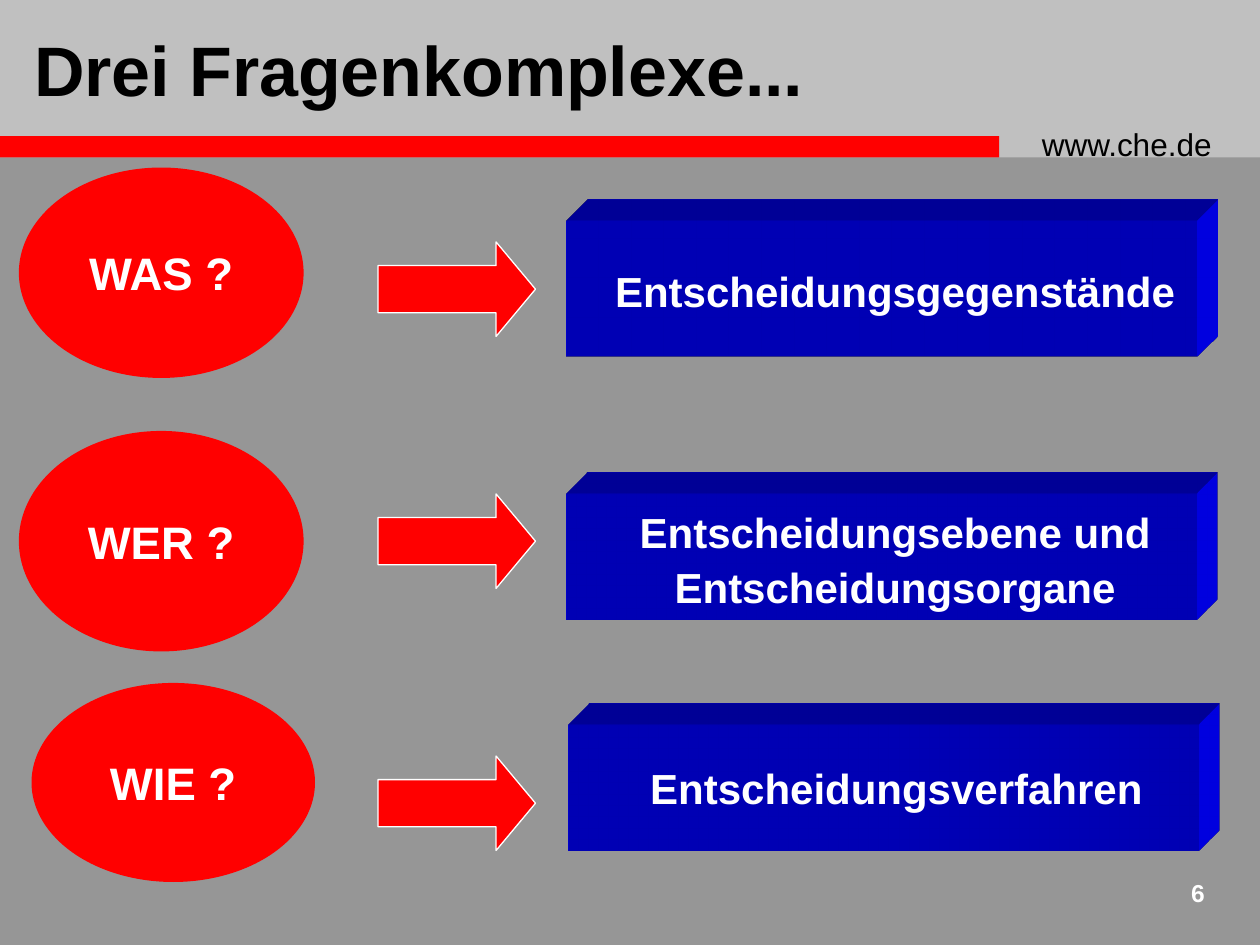
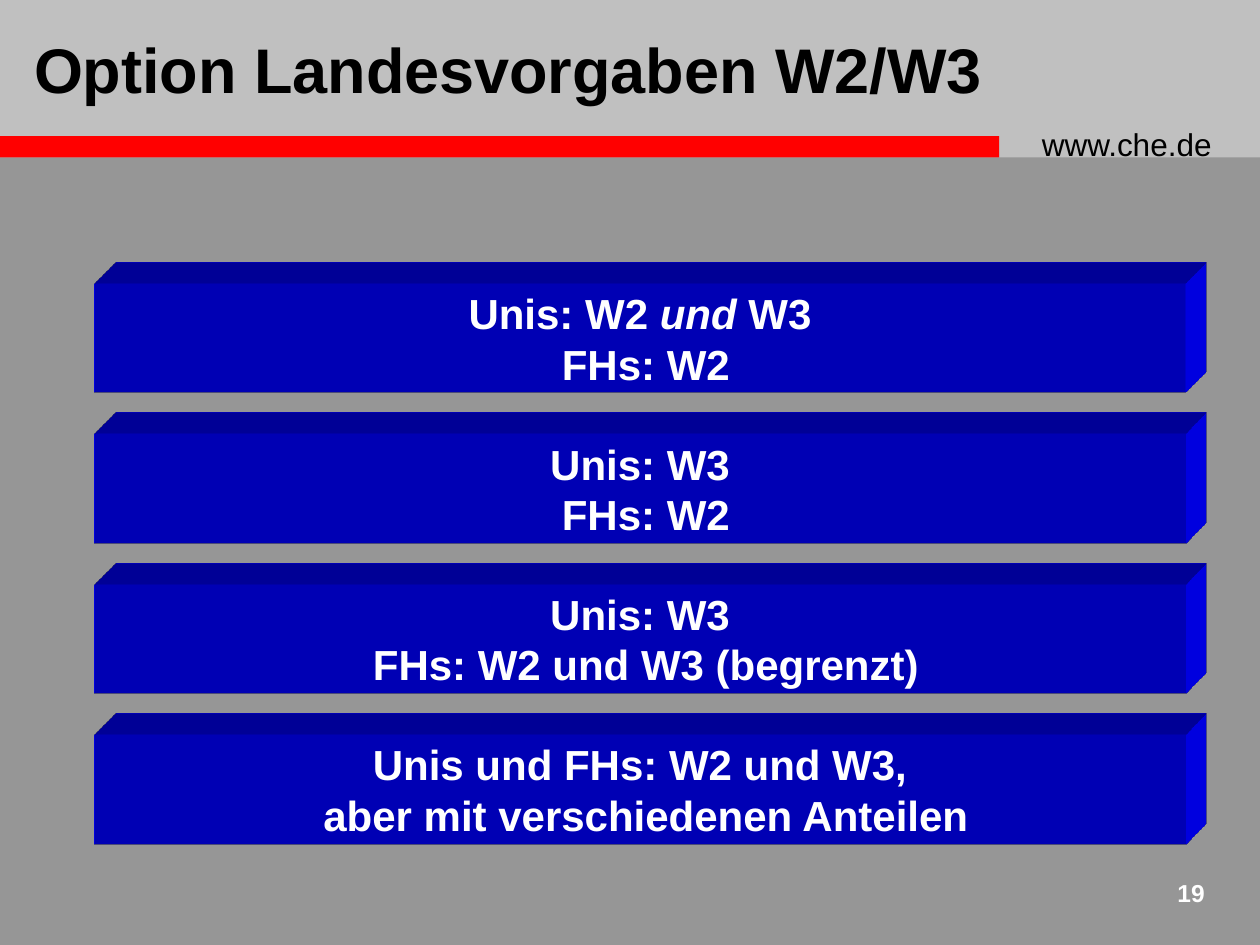
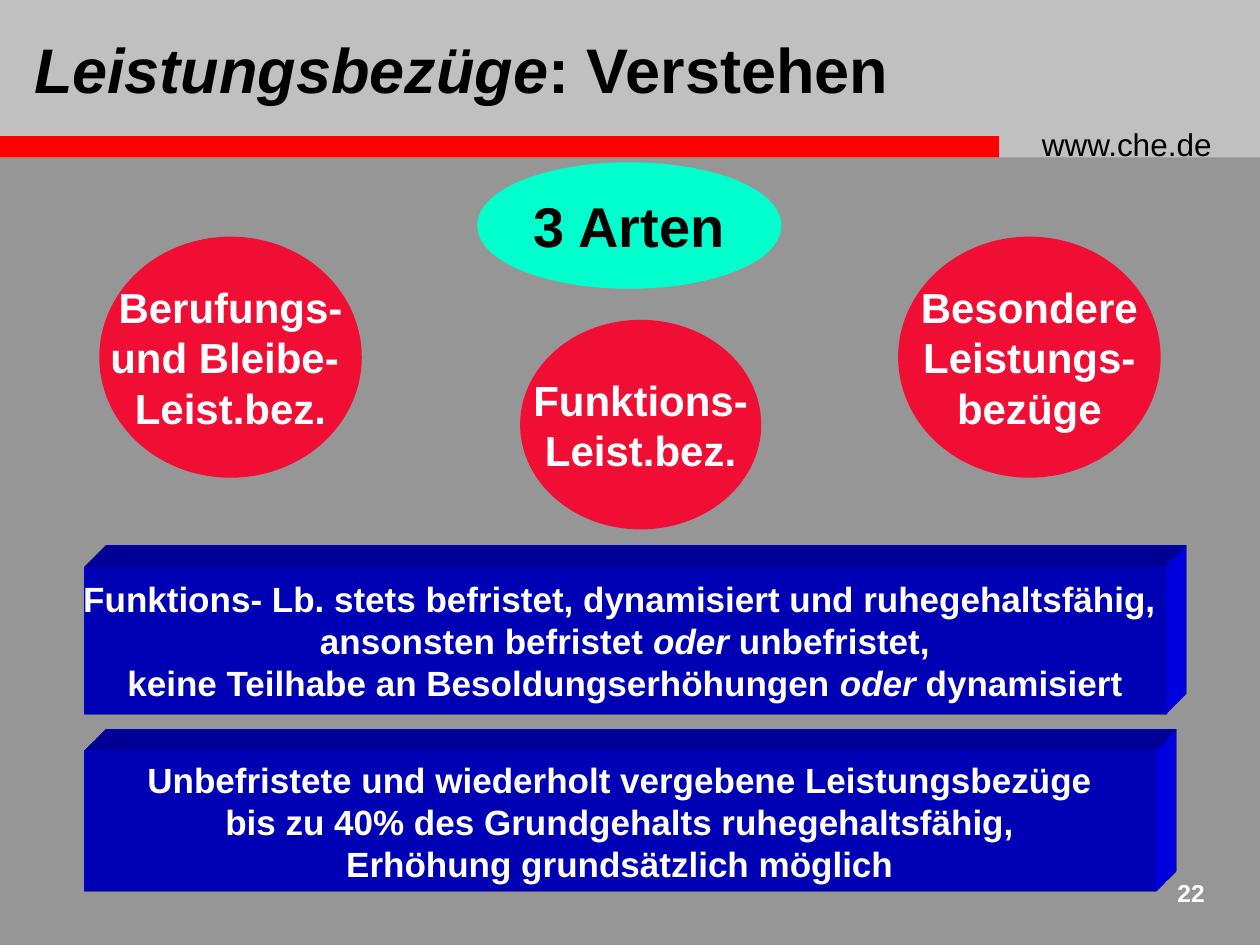
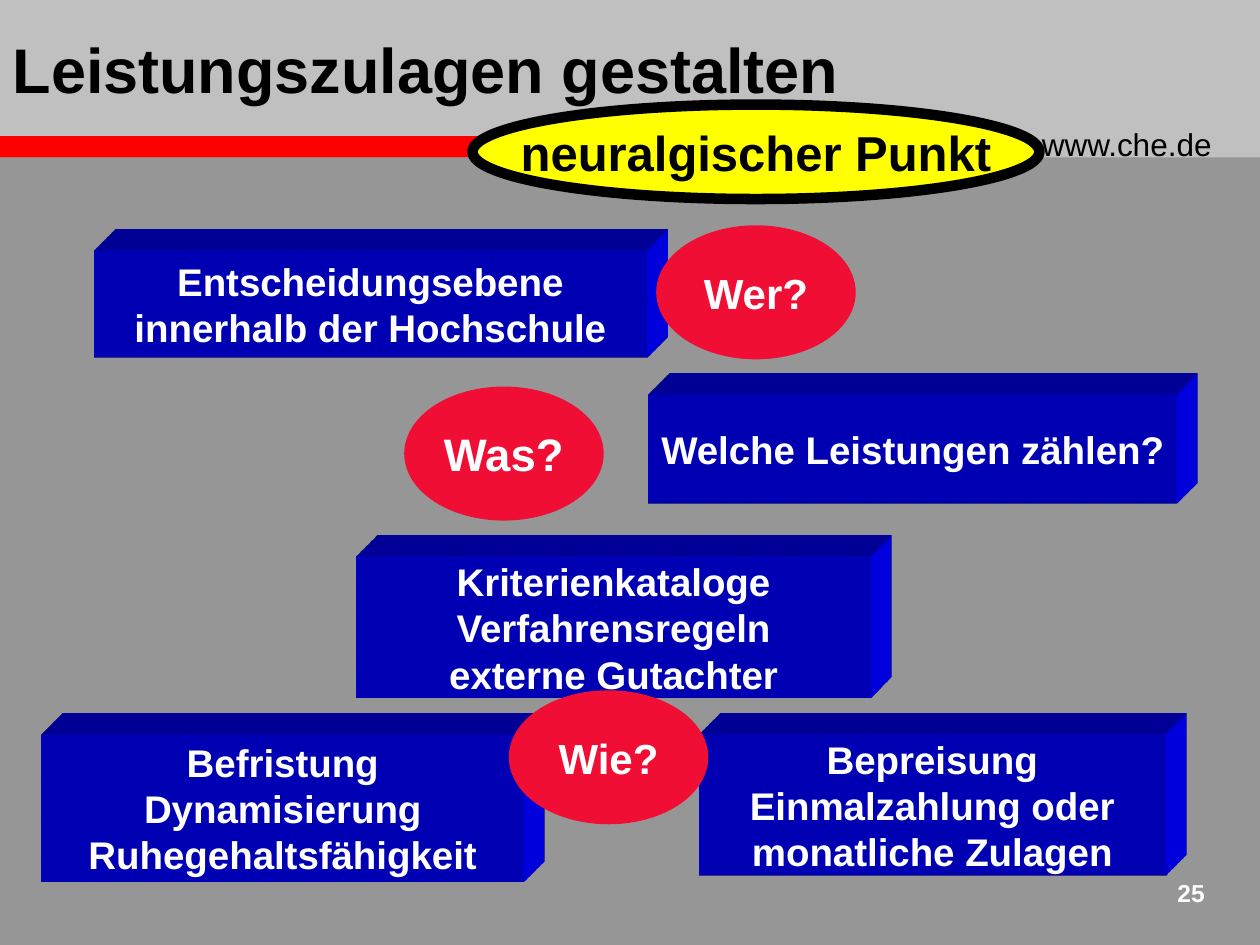
from lxml import etree
from pptx import Presentation
from pptx.dml.color import RGBColor
from pptx.enum import shapes, text
from pptx.oxml import parse_xml
from pptx.oxml.ns import nsdecls, qn
from pptx.util import Inches, Pt

FONT = "Arial"
BLACK = RGBColor(0x00, 0x00, 0x00)
WHITE = RGBColor(0xFF, 0xFF, 0xFF)
GREY = RGBColor(0x96, 0x96, 0x96)
SILVER = RGBColor(0xC0, 0xC0, 0xC0)
RED = RGBColor(0xFF, 0x00, 0x00)
CRIMSON = RGBColor(0xF0, 0x0E, 0x34)
BLUE = RGBColor(0x00, 0x00, 0xFF)
TURQUOISE = RGBColor(0x00, 0xFF, 0xCC)
YELLOW = RGBColor(0xFF, 0xFF, 0x00)

SHAPE = shapes.MSO_SHAPE
ALIGN = text.PP_ALIGN

SCENE_3D = (
    f'<a:scene3d {nsdecls("a")}>'
    '<a:camera prst="legacyObliqueTopRight"/>'
    '<a:lightRig rig="legacyFlat3" dir="b"/></a:scene3d>'
)
BODY_3D = (
    f'<a:sp3d {nsdecls("a")} extrusionH="430200" prstMaterial="legacyMatte">'
    '<a:bevelT w="13500" h="13500" prst="angle"/>'
    '<a:bevelB w="13500" h="13500" prst="angle"/>'
    f'<a:extrusionClr><a:srgbClr val="{BLUE}"/></a:extrusionClr></a:sp3d>'
)


def write(tf, lines, size, color, bold=True, align=ALIGN.CENTER, spacing=None, indent=None):
    """Fill a text frame; in each line the parts between asterisks are italic."""
    for i, line in enumerate(lines):
        p = tf.paragraphs[0] if i == 0 else tf.add_paragraph()
        p.alignment = align
        if spacing:
            p.line_spacing = spacing
        if indent:
            pPr = p._p.get_or_add_pPr()
            pPr.set("marL", str(Inches(indent)))
            pPr.set("indent", "0")
        for k, part in enumerate(line.split("*")):
            if not part:
                continue
            r = p.add_run()
            r.text = part
            r.font.name = FONT
            r.font.size = Pt(size)
            r.font.bold = bold
            r.font.italic = k % 2 == 1
            r.font.color.rgb = color


def add_shape(s, kind, box, fill, line=None, width=6):
    sp = s.shapes.add_shape(kind, *map(Inches, box))
    sp.shadow.inherit = False
    sp.fill.solid()
    sp.fill.fore_color.rgb = fill
    if line is None:
        sp.line.fill.background()
    else:
        sp.line.color.rgb = line
        sp.line.width = Pt(width)
    return sp


def add_label(sp, lines, size, color=WHITE, **style):
    tf = sp.text_frame
    tf.word_wrap = False
    tf.vertical_anchor = text.MSO_ANCHOR.MIDDLE
    write(tf, lines, size, color, **style)


def add_block(s, box, lines, size, **style):
    """Blue bar extruded to the upper right."""
    sp = add_shape(s, SHAPE.RECTANGLE, box, BLUE)
    spPr = sp.element.find(qn("p:spPr"))
    for xml in (SCENE_3D, BODY_3D):
        spPr.append(parse_xml(xml))
    add_label(sp, lines, size, **style)


def add_ellipse(s, box, lines, size, fill=CRIMSON, line=CRIMSON, color=WHITE):
    sp = add_shape(s, SHAPE.OVAL, box, fill, line)
    add_label(sp, lines, size, color)


def add_arrow(s, box):
    sp = add_shape(s, SHAPE.RIGHT_ARROW, box, RED, WHITE, 0.75)
    sp.adjustments[0] = 0.5
    sp.adjustments[1] = 0.417


def add_text(s, box, line, size, color, bold, align):
    sp = s.shapes.add_textbox(*map(Inches, box))
    sp.text_frame.word_wrap = True
    write(sp.text_frame, [line], size, color, bold, align)
    return sp


def build_master(prs, s):
    """Draw the shared header on s, then move it behind the master's placeholders."""
    master = prs.slide_master
    master.background.fill.solid()
    master.background.fill.fore_color.rgb = GREY
    header = [
        add_shape(s, SHAPE.RECTANGLE, (0, 0, 10, 1.25), SILVER),
        add_shape(s, SHAPE.RECTANGLE, (0, 1.08, 7.93, 0.17), RED),
        add_text(s, (8.17, 0.94, 1.75, 0.4), "www.che.de", 18, BLACK, False, ALIGN.LEFT),
    ]
    tree = master.shapes.element
    for i, sp in enumerate(header):
        tree.insert(2 + i, sp.element)


def add_slide(prs, title, number, size=36, left=0.17):
    s = prs.slides.add_slide(prs.slide_layouts.get_by_name("Title Only"))
    sp = s.shapes.title
    sp.left, sp.top, sp.width, sp.height = map(Inches, (left, 0, 8.08, 1.08))
    tf = sp.text_frame
    tf.auto_size = text.MSO_AUTO_SIZE.NONE
    tf.vertical_anchor = text.MSO_ANCHOR.MIDDLE
    write(tf, [title], size, BLACK, align=ALIGN.LEFT)
    add_text(s, (9.08, 6.92, 0.58, 0.42), str(number), 14, WHITE, True, ALIGN.RIGHT)
    return s


def questions_slide(prs):
    s = add_slide(prs, "Drei Fragenkomplexe...", 6, size=40)
    rows = [
        ("WAS ?", (0.15, 1.33, 2.26, 1.67), 1.92, (4.5, 1.75, 5, 1.08),
         ["Entscheidungsgegenstände"], 1.1),
        ("WER ?", (0.15, 3.42, 2.26, 1.75), 3.92, (4.5, 3.92, 5, 1),
         ["Entscheidungsebene und", "Entscheidungsorgane"], 1.1),
        ("WIE ?", (0.25, 5.42, 2.25, 1.58), 6, (4.51, 5.75, 5, 1),
         ["Entscheidungsverfahren"], None),
    ]
    for question, oval, arrow_top, block, topics, spacing in rows:
        add_block(s, block, topics, 24, spacing=spacing, indent=0.21)
        add_ellipse(s, oval, [question], 26, fill=RED, line=None)
        add_arrow(s, (3, arrow_top, 1.25, 0.75))
    return s


def options_slide(prs):
    s = add_slide(prs, "Option Landesvorgaben W2/W3", 19)
    options = [
        ["Unis: W2 *und* W3", " FHs: W2"],
        ["Unis: W3", " FHs: W2"],
        ["Unis: W3", " FHs: W2 und W3 (begrenzt)"],
        ["Unis und FHs: W2 und W3,", " aber mit verschiedenen Anteilen"],
    ]
    for i, lines in enumerate(options):
        add_block(s, (0.75, 2.25 + i * 3.58 / 3, 8.66, 0.87), lines, 24)


def kinds_slide(prs):
    s = add_slide(prs, "*Leistungsbezüge*: Verstehen", 22)
    add_block(s, (0.67, 5.96, 8.5, 1.12), [
        "Unbefristete und wiederholt vergebene Leistungsbezüge",
        "bis zu 40% des Grundgehalts ruhegehaltsfähig,",
        "Erhöhung grundsätzlich möglich"], 20)
    add_block(s, (0.67, 4.5, 8.58, 1.17), [
        "Funktions- Lb. stets befristet, dynamisiert und ruhegehaltsfähig, ",
        "ansonsten befristet *oder* unbefristet,",
        "keine Teilhabe an Besoldungserhöhungen *oder* dynamisiert"], 20)
    add_ellipse(s, (3.83, 1.33, 2.33, 0.92), ["3 Arten"], 32, TURQUOISE, TURQUOISE, BLACK)
    for box, lines in [
        ((0.83, 1.92, 2, 1.83), ["Berufungs-", "und Bleibe- ", "Leist.bez."]),
        ((4.17, 2.58, 1.83, 1.58), ["Funktions-", "Leist.bez."]),
        ((7.17, 1.92, 2, 1.83), ["Besondere", "Leistungs-", "bezüge"]),
    ]:
        add_ellipse(s, box, lines, 24)


def design_slide(prs):
    s = add_slide(prs, "Leistungszulagen gestalten", 25, left=0)
    for box, lines in [
        ((0.75, 1.99, 4.38, 0.85), ["Entscheidungsebene", "innerhalb der Hochschule"]),
        ((5.15, 3.13, 4.19, 0.87), ["Welche Leistungen zählen?"]),
        ((0.33, 5.83, 3.83, 1.17), ["Befristung", "Dynamisierung", "Ruhegehaltsfähigkeit"]),
        ((5.55, 5.83, 3.7, 1.12), ["Bepreisung", "Einmalzahlung oder", "monatliche Zulagen"]),
        ((2.83, 4.42, 4.08, 1.12), ["Kriterienkataloge", "Verfahrensregeln", "externe Gutachter"]),
    ]:
        add_block(s, box, lines, 22)
    add_ellipse(s, (3.75, 0.83, 4.5, 0.75), ["neuralgischer Punkt"], 28, YELLOW, BLACK, BLACK)
    for question, left, top, size in [
        ("Wer?", 5.25, 1.83, 24), ("Was?", 3.25, 3.11, 26), ("Wie?", 4.08, 5.52, 24),
    ]:
        add_ellipse(s, (left, top, 1.5, 0.98), [question], size)


def main():
    prs = Presentation()
    prs.slide_width, prs.slide_height = Inches(10), Inches(7.5)
    first = questions_slide(prs)
    build_master(prs, first)
    options_slide(prs)
    kinds_slide(prs)
    design_slide(prs)
    prs.save("out.pptx")


if __name__ == "__main__":
    main()
